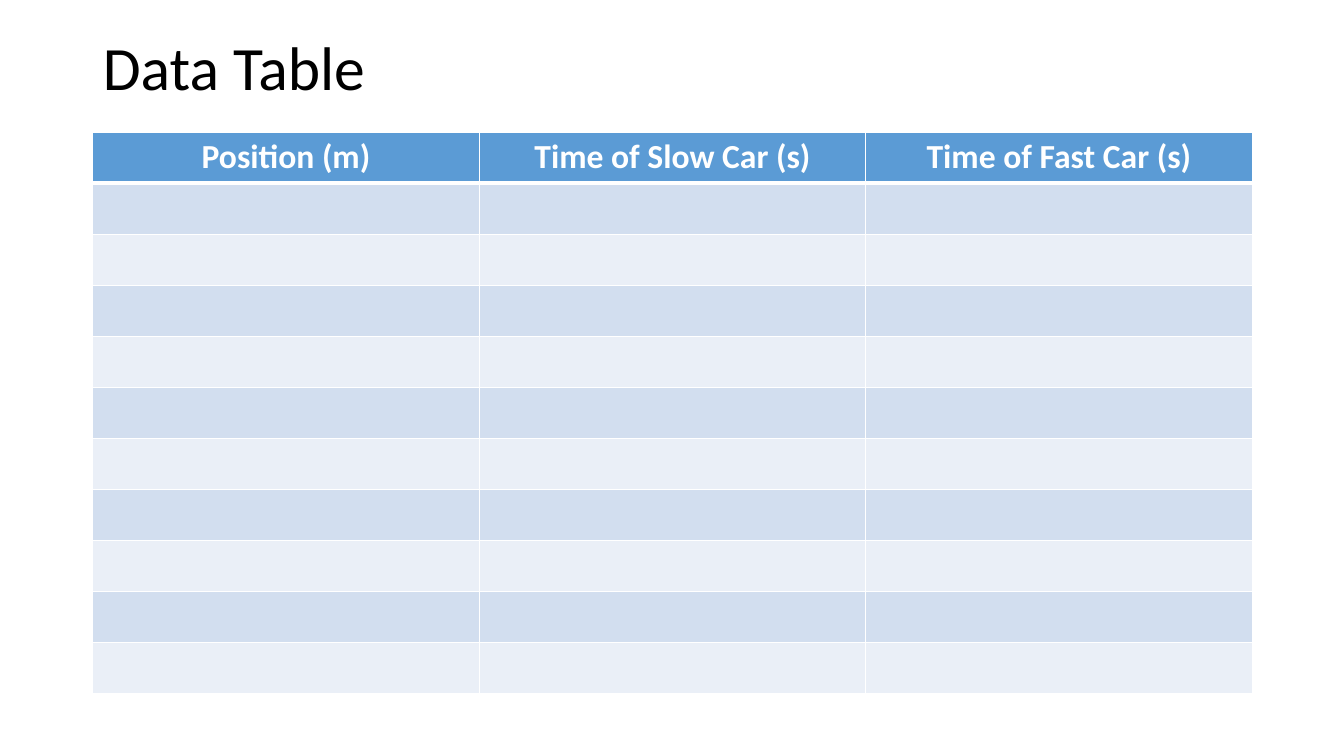
from lxml import etree
from pptx import Presentation
from pptx import util as u
from pptx.dml.color import RGBColor
from pptx.enum import text
from pptx.oxml import ns

HEADINGS = ["Position (m)", "Time of Slow Car (s)", "Time of Fast Car (s)"]
BLANK_ROWS = 10
HEADER_FILL = "5B9BD5"
BAND_FILLS = ["EAEFF7", "D2DEEF"]
WHITE = "FFFFFF"


def colour(value):
    return RGBColor.from_string(value)


def write(frame, words, size, fill="000000", bold=False,
          align=text.PP_ALIGN.LEFT, spacing=1.0):
    para = frame.paragraphs[0]
    para.alignment = align
    para.line_spacing = spacing
    span = para.add_run()
    span.text = words
    span.font.name = "Calibri"
    span.font.size = u.Pt(size)
    span.font.bold = bold
    span.font.color.rgb = colour(fill)


def add_title(page, words):
    title = page.shapes.title
    title.left, title.top = u.Inches(0.92), u.Inches(0.2)
    title.width, title.height = u.Inches(8.5), u.Inches(1)
    title.text_frame.vertical_anchor = text.MSO_ANCHOR.MIDDLE
    title.text_frame.word_wrap = True
    write(title.text_frame, words, 44, spacing=0.9)


def set_borders(cell, **widths):
    """Draw white cell borders, given widths in points by side: L, R, T, B."""
    properties = cell._tc.get_or_add_tcPr()
    for index, (side, width) in enumerate(widths.items()):
        line = etree.Element(ns.qn(f"a:ln{side}"), w=str(u.Pt(width)))
        fill = etree.SubElement(line, ns.qn("a:solidFill"))
        etree.SubElement(fill, ns.qn("a:srgbClr"), val=WHITE)
        properties.insert(index, line)


def style_cell(cell, fill, top, bottom):
    cell.fill.solid()
    cell.fill.fore_color.rgb = colour(fill)
    set_borders(cell, L=1, R=1, T=top, B=bottom)


def add_data_table(page):
    frame = page.shapes.add_table(
        BLANK_ROWS + 1, len(HEADINGS),
        u.Inches(0.92), u.Inches(1.31), u.Inches(11.5), u.Inches(5.57))
    table = frame.table
    for column, heading in enumerate(HEADINGS):
        header = table.cell(0, column)
        style_cell(header, HEADER_FILL, top=1, bottom=3)
        write(header.text_frame, heading, 24, fill=WHITE, bold=True,
              align=text.PP_ALIGN.CENTER)
        for row in range(1, BLANK_ROWS + 1):
            style_cell(table.cell(row, column), BAND_FILLS[row % 2],
                       top=3 if row == 1 else 1, bottom=1)


def main():
    deck = Presentation()
    deck.slide_width, deck.slide_height = u.Inches(13.33), u.Inches(7.5)
    page = deck.slides.add_slide(deck.slide_layouts.get_by_name("Title Only"))
    add_title(page, "Data Table")
    add_data_table(page)
    deck.save("out.pptx")


if __name__ == "__main__":
    main()
